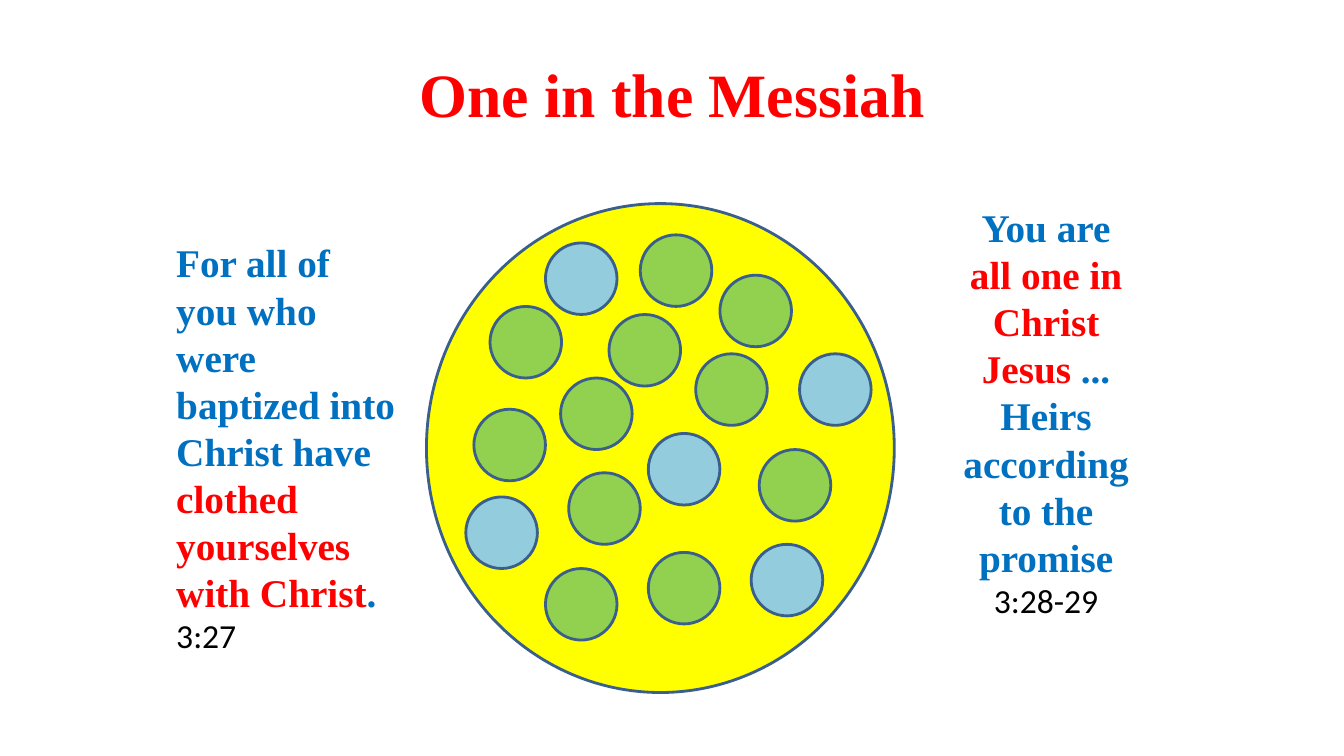
"""Build the "One in the Messiah" slide."""
from dataclasses import dataclass

from pptx import Presentation
from pptx.dml.color import RGBColor
from pptx.enum import shapes, text
from pptx.util import Inches, Pt

COLORS = {
    "red": "FF0000",
    "blue": "0070C0",
    "black": "000000",
    "yellow": "FFFF00",
    "green": "92D050",
    "sky": "93CDDD",
    "outline": "3A5F8C",
}
SERIF = "Times New Roman"
SANS = "Calibri"
DOT_SIZE = 0.71


@dataclass(frozen=True)
class Circle:
    """An outlined ellipse, in inches."""
    left: float
    top: float
    color: str
    width: float = DOT_SIZE
    height: float = DOT_SIZE


@dataclass(frozen=True)
class Phrase:
    """A stretch of text in one style."""
    words: str
    color: str
    size: int = 28
    font: str = SERIF
    bold: bool = True


@dataclass(frozen=True)
class Verse:
    """A text box holding a quoted verse, in inches."""
    left: float
    top: float
    width: float
    height: float
    align: text.PP_ALIGN
    phrases: tuple[Phrase, ...]


BODY = Circle(4.23, 2.02, "yellow", 4.64, 4.85)
MEMBERS = [
    Circle(4.62, 4.93, "sky"),
    Circle(5.64, 4.69, "green"),
    Circle(7.93, 3.51, "sky"),
    Circle(4.86, 3.04, "green"),
    Circle(7.53, 4.46, "green"),
    Circle(6.43, 5.48, "green"),
    Circle(6.9, 3.51, "green"),
    Circle(5.56, 3.75, "green"),
    Circle(5.41, 5.64, "green"),
    Circle(6.43, 4.3, "sky"),
    Circle(4.7, 4.06, "green"),
    Circle(6.35, 2.33, "green"),
    Circle(7.45, 5.4, "sky"),
    Circle(7.14, 2.73, "green"),
    Circle(6.04, 3.12, "green"),
    Circle(5.41, 2.41, "sky"),
]
VERSES = [
    Verse(9.43, 1.97, 1.89, 4.27, text.PP_ALIGN.CENTER, (
        Phrase("You are ", "blue"),
        Phrase("all one in Christ Jesus ", "red"),
        Phrase("... Heirs according to the promise ", "blue"),
        Phrase("3:28-29", "black", 24, SANS, False),
    )),
    Verse(1.65, 2.32, 2.4, 4.27, text.PP_ALIGN.LEFT, (
        Phrase("For all of you who were baptized into Christ have ", "blue"),
        Phrase("clothed yourselves with Christ", "red"),
        Phrase(". ", "blue"),
        Phrase("3:27", "black", 24, SANS, False),
    )),
]


def rgb(name: str) -> RGBColor:
    """Look up a colour by name."""
    return RGBColor.from_string(COLORS[name])


def style_font(font, phrase: Phrase) -> None:
    """Apply the style of a phrase to a font."""
    font.name = phrase.font
    font.size = Pt(phrase.size)
    font.bold = phrase.bold
    font.color.rgb = rgb(phrase.color)


def set_title(s, phrase: Phrase) -> None:
    """Place and fill the title placeholder."""
    sp = s.shapes.title
    sp.left, sp.top = Inches(0.67), Inches(0.3)
    sp.width, sp.height = Inches(12), Inches(1.25)
    tf = sp.text_frame
    tf.text = phrase.words
    tf.vertical_anchor = text.MSO_ANCHOR.MIDDLE
    p = tf.paragraphs[0]
    p.alignment = text.PP_ALIGN.CENTER
    style_font(p.font, phrase)


def draw_circle(s, circle: Circle) -> None:
    """Draw one outlined ellipse."""
    sp = s.shapes.add_shape(
        shapes.MSO_SHAPE.OVAL, Inches(circle.left), Inches(circle.top),
        Inches(circle.width), Inches(circle.height))
    sp.shadow.inherit = False
    sp.fill.solid()
    sp.fill.fore_color.rgb = rgb(circle.color)
    sp.line.color.rgb = rgb("outline")
    sp.line.width = Pt(2)


def draw_verse(s, verse: Verse) -> None:
    """Draw one verse as a wrapped text box."""
    sp = s.shapes.add_textbox(
        Inches(verse.left), Inches(verse.top),
        Inches(verse.width), Inches(verse.height))
    tf = sp.text_frame
    tf.word_wrap = True
    tf.auto_size = text.MSO_AUTO_SIZE.SHAPE_TO_FIT_TEXT
    p = tf.paragraphs[0]
    p.alignment = verse.align
    for phrase in verse.phrases:
        r = p.add_run()
        r.text = phrase.words
        style_font(r.font, phrase)


def main() -> None:
    """Build and save the slide."""
    prs = Presentation()
    prs.slide_width, prs.slide_height = Inches(13.33), Inches(7.5)
    s = prs.slides.add_slide(prs.slide_layouts.get_by_name("Title Only"))
    set_title(s, Phrase("One in the Messiah", "red", 44))
    for circle in [BODY, *MEMBERS]:
        draw_circle(s, circle)
    for verse in VERSES:
        draw_verse(s, verse)
    prs.save("out.pptx")


if __name__ == "__main__":
    main()
